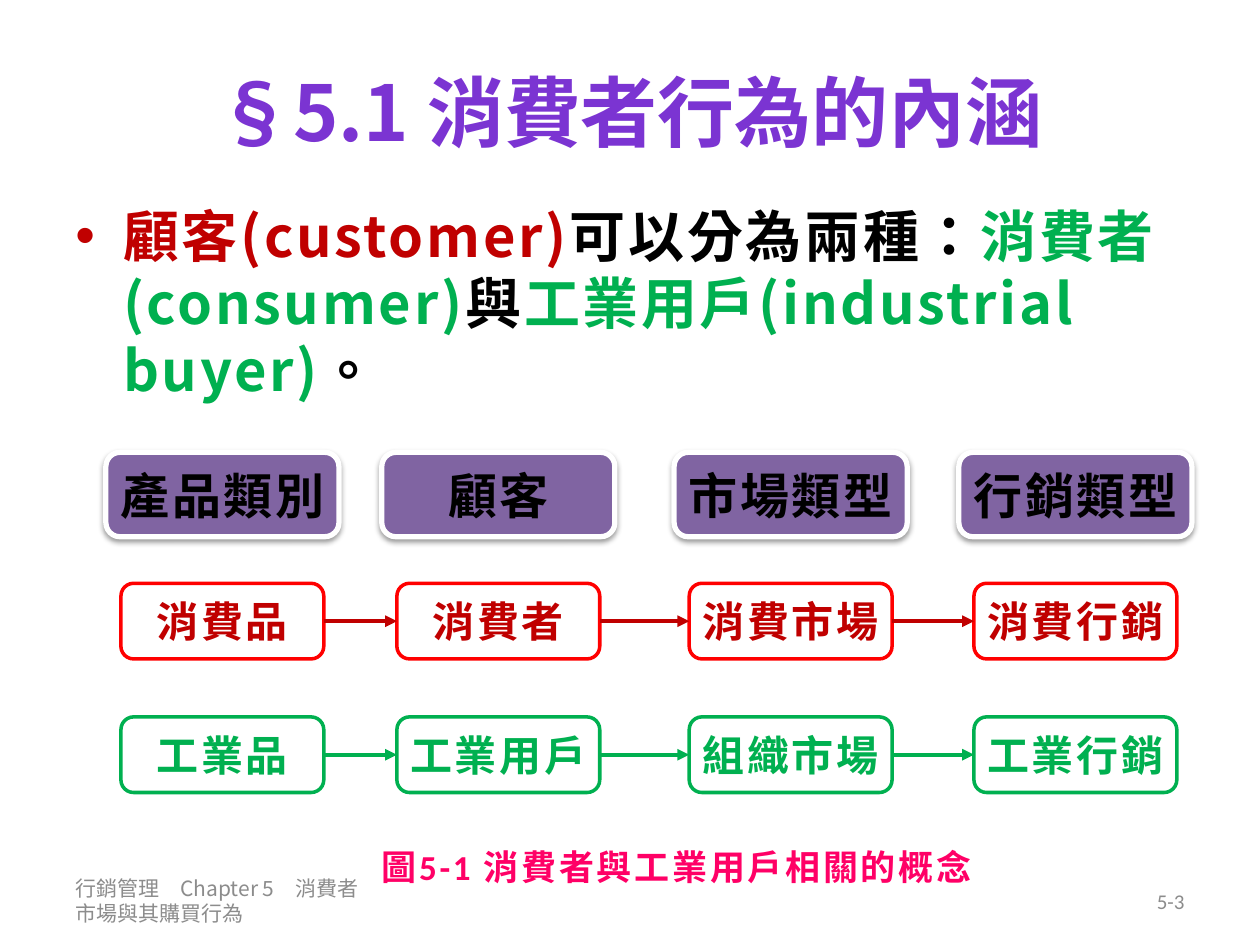
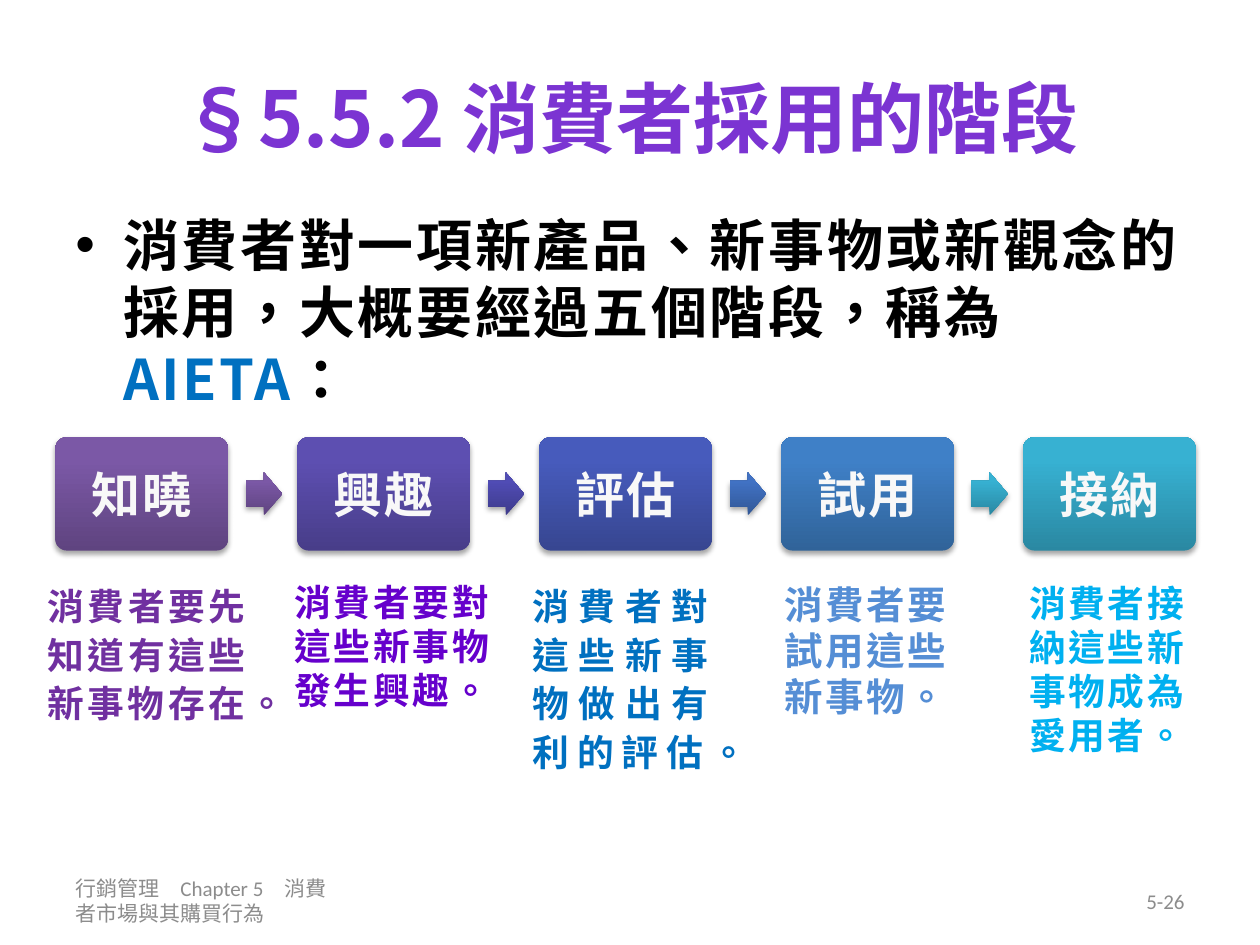
"""Build two slides on consumer behaviour and the stages of adoption."""
from dataclasses import dataclass

from lxml import etree
from pptx import Presentation
from pptx.dml.color import RGBColor
from pptx.enum.shapes import MSO_CONNECTOR, MSO_SHAPE
from pptx.enum.text import MSO_ANCHOR, PP_ALIGN
from pptx.oxml.ns import qn
from pptx.util import Inches, Pt

ROUND, ARROW = MSO_SHAPE.ROUNDED_RECTANGLE, MSO_SHAPE.RIGHT_ARROW
STRAIGHT = MSO_CONNECTOR.STRAIGHT
MIDDLE, TOP = MSO_ANCHOR.MIDDLE, MSO_ANCHOR.TOP
LEFT, CENTER, RIGHT = PP_ALIGN.LEFT, PP_ALIGN.CENTER, PP_ALIGN.RIGHT
JUSTIFY = PP_ALIGN.JUSTIFY


@dataclass(frozen=True)
class Theme:
    """Fonts, colours and type sizes of the deck."""
    cjk: str = "Noto Sans CJK SC"
    latin: str = "Calibri"
    title: str = "7B34D2"
    black: str = "000000"
    white: str = "FFFFFF"
    pale: str = "F8F8F8"
    gray: str = "8C8C8C"
    head: str = "8064A2"
    red: str = "C00000"
    edge: str = "FF0000"
    green: str = "00B050"
    blue: str = "0070C0"
    pink: str = "FF0066"
    title_pt: int = 44
    body_pt: int = 32
    head_pt: int = 28
    card_pt: int = 24
    cap_pt: int = 20
    note_pt: int = 21
    foot_pt: int = 12
    track: float = 1.5
    line: float = 1.2


T = Theme()
FOOTER = "行銷管理　Chapter 5　消費者市場與其購買行為"
CENTERS = (1.76, 3.95, 6.27, 8.53)
HEADS = ("產品類別", "顧客", "市場類型", "行銷類型")
ROWS = (
    (4.63, T.edge, T.red, ("消費品", "消費者", "消費市場", "消費行銷")),
    (5.69, T.green, T.green, ("工業品", "工業用戶", "組織市場", "工業行銷")),
)
STAGES = (
    ("知曉", "5F4480", "7B58A6"),
    ("興趣", "483D89", "5D4FB1"),
    ("評估", "374691", "475BBC"),
    ("試用", "306399", "3F80C7"),
    ("接納", "2A88A2", "37B1D2"),
)
ARROWS = (("5F4480", "7B58A6"), ("3E3B8B", "504CB5"),
          ("325897", "4172C4"), ("2A88A2", "37B1D2"))
NOTES = (
    ((0.28, 4.55, 1.79, 1.27), "消費者要先知道有這些新事物存在。", "7030A0", 21, True),
    ((2.24, 4.55, 1.89, 1.16), "消費者要對這些新事物發生興趣。", "6600CC", 21, False),
    ((4.13, 4.55, 1.61, 1.66), "消費者對這些新事物做出有利的評估。", T.blue, 21, True),
    ((6.13, 4.56, 1.52, 1.21), "消費者要試用這些新事物。", "558ED5", 22, False),
    ((8.07, 4.56, 1.55, 1.51), "消費者接納這些新事物成為愛用者。", "00B0F0", T.note_pt, False),
)


def rgb(code):
    """Turn a hex code into a colour."""
    return RGBColor.from_string(code)


def add_run(para, text, size, color, bold=True, font=T.cjk, track=T.track):
    """Add one styled run to a paragraph."""
    run = para.add_run()
    run.text = text
    run.font.size, run.font.bold, run.font.name = Pt(size), bold, font
    run.font.color.rgb = rgb(color)
    props = run.font._element
    props.set("lang", "zh-TW")
    props.set("spc", str(int(track * 100)))
    etree.SubElement(props, qn("a:ea"), typeface=T.cjk)


def set_frame(shape, align=CENTER, anchor=MIDDLE, wrap=True):
    """Set up a text frame and give back its first paragraph."""
    frame = shape.text_frame
    frame.word_wrap, frame.vertical_anchor = wrap, anchor
    para = frame.paragraphs[0]
    para.alignment = align
    return para


def add_box(slide, at, align=LEFT, anchor=TOP, wrap=True):
    """Add a text box and give back its first paragraph."""
    box = slide.shapes.add_textbox(*map(Inches, at))
    return set_frame(box, align, anchor, wrap)


def add_shape(slide, kind, at, adjust=(), shadow=None):
    """Add a shape with an optional soft drop shadow."""
    shape = slide.shapes.add_shape(kind, *map(Inches, at))
    for place, value in enumerate(adjust):
        shape.adjustments[place] = value
    shape.shadow.inherit = False
    if shadow:
        alpha, drop = shadow
        effects = shape._element.spPr.find(qn("a:effectLst"))
        outer = etree.SubElement(
            effects, qn("a:outerShdw"), blurRad=str(Pt(3.1)),
            dist=str(Pt(drop)), dir="5400000", rotWithShape="0")
        color = etree.SubElement(outer, qn("a:srgbClr"), val=T.black)
        etree.SubElement(color, qn("a:alpha"), val=str(alpha * 1000))
    return shape


def add_card(slide, at, text, size, color, fill, edge, width, shadow=None):
    """Add a rounded card with a plain fill and a label."""
    card = add_shape(slide, ROUND, at, (0.167,), shadow)
    card.fill.solid()
    card.fill.fore_color.rgb = rgb(fill)
    card.line.color.rgb = rgb(edge)
    card.line.width = Pt(width)
    add_run(set_frame(card, wrap=False), text, size, color)
    return card


def add_blend(slide, kind, at, adjust, dark, light):
    """Add a shadowed shape that grows lighter towards its top."""
    shape = add_shape(slide, kind, at, adjust, (35, 1.8))
    shape.line.fill.background()
    shape.fill.gradient()
    shape.fill.gradient_angle = 90
    for stop, place, color in zip(shape.fill.gradient_stops, (0, 0.8), (dark, light)):
        stop.position = place
        stop.color.rgb = rgb(color)
    return shape


def add_link(slide, start, end, color):
    """Join two cards with an arrow."""
    link = slide.shapes.add_connector(STRAIGHT, 0, 0, 0, 0)
    link.begin_connect(start, 3)
    link.end_connect(end, 1)
    link.line.color.rgb = rgb(color)
    link.line.width = Pt(2.25)
    etree.SubElement(link.line._get_or_add_ln(), qn("a:tailEnd"), type="triangle")
    etree.SubElement(link._element.spPr, qn("a:effectLst"))


def add_body(slide, at, parts):
    """Add the bulleted lead text from pairs of text and colour."""
    para = add_box(slide, at)
    para.line_spacing = Pt(T.body_pt * T.line)
    props = para._p.get_or_add_pPr()
    props.set("marL", str(Inches(0.38)))
    props.set("indent", str(Inches(-0.38)))
    etree.SubElement(props, qn("a:buFont"), typeface="Arial")
    etree.SubElement(props, qn("a:buChar"), char="•")
    for text, color in parts:
        add_run(para, text, T.body_pt, color)


def add_page(deck, title, top, height, number, width, font):
    """Add a slide with its title, footer and page number."""
    slide = deck.slides.add_slide(deck.slide_layouts[5])
    head = slide.shapes.title
    head.left, head.top = Inches(0.5), Inches(top)
    head.width, head.height = Inches(9), Inches(height)
    add_run(set_frame(head), title, T.title_pt, T.title, track=0)
    foot = add_box(slide, (0.5, 6.95, width, 0.4), LEFT, MIDDLE)
    foot.line_spacing = Pt(T.foot_pt * T.line)
    add_run(foot, FOOTER, T.foot_pt, T.gray, False, font, 0)
    page = add_box(slide, (7.17, 6.95, 2.33, 0.4), RIGHT, MIDDLE)
    add_run(page, number, T.foot_pt, T.gray, False, T.latin, 0)
    return slide


def add_grid(slide):
    """Add the column heads and the two linked rows of cards."""
    for mid, text in zip(CENTERS, HEADS):
        add_card(slide, (mid - 0.92, 3.59, 1.85, 0.67), text, T.head_pt,
                 T.black, T.head, T.white, 3, (38, 1.6))
    for top, edge, color, names in ROWS:
        cards = [add_card(slide, (mid - 0.8, top, 1.61, 0.6), name, T.card_pt,
                          color, T.white, edge, 2)
                 for mid, name in zip(CENTERS, names)]
        for start, end in zip(cards, cards[1:]):
            add_link(slide, start, end, color)


def add_stages(slide):
    """Add the chain of stages with the arrows between them."""
    pitch = 1.92
    for step, (name, dark, light) in enumerate(STAGES):
        left = 0.44 + step * pitch
        stage = add_blend(slide, ROUND, (left, 3.47, 1.37, 0.9), (0.1,), dark, light)
        add_run(set_frame(stage), name, T.head_pt, T.pale)
    for step, (dark, light) in enumerate(ARROWS):
        left = 1.95 + step * pitch
        add_blend(slide, ARROW, (left, 3.75, 0.29, 0.34), (0.6, 0.5), dark, light)


def add_notes(slide):
    """Add the text under each stage."""
    for at, text, color, size, spread in NOTES:
        para = add_box(slide, at, JUSTIFY if spread else LEFT)
        para.line_spacing = Pt(size * T.line * (1.1 if spread else 1))
        add_run(para, text, size, color)


def main():
    """Build and save the deck."""
    deck = Presentation()
    deck.slide_width, deck.slide_height = Inches(10), Inches(7.5)

    kinds = add_page(deck, "§5.1 消費者行為的內涵", 0.21, 1.34, "5-3", 2.45, T.cjk)
    add_body(kinds, (0.5, 1.55, 9, 1.97), (
        ("顧客(customer)", T.red), ("可以分為兩種：", T.black),
        ("消費者(consumer)", T.green), ("與", T.black),
        ("工業用戶(industrial buyer)", T.green), ("。", T.black)))
    add_grid(kinds)
    label = add_box(kinds, (2.93, 6.66, 5.04, 0.44), wrap=False)
    add_run(label, "圖5-1 消費者與工業用戶相關的概念", T.cap_pt, T.pink, font=T.latin)

    steps = add_page(deck, "§5.5.2 消費者採用的階段", 0.3, 1.25, "5-26", 2.33, T.latin)
    add_body(steps, (0.5, 1.62, 9, 1.73), (
        ("消費者對一項新產品、新事物或新觀念的採用，大概要經過五個階段，稱為", T.black),
        ("AIETA", T.blue), ("：", T.black)))
    add_stages(steps)
    add_notes(steps)
    deck.save("out.pptx")


if __name__ == "__main__":
    main()
